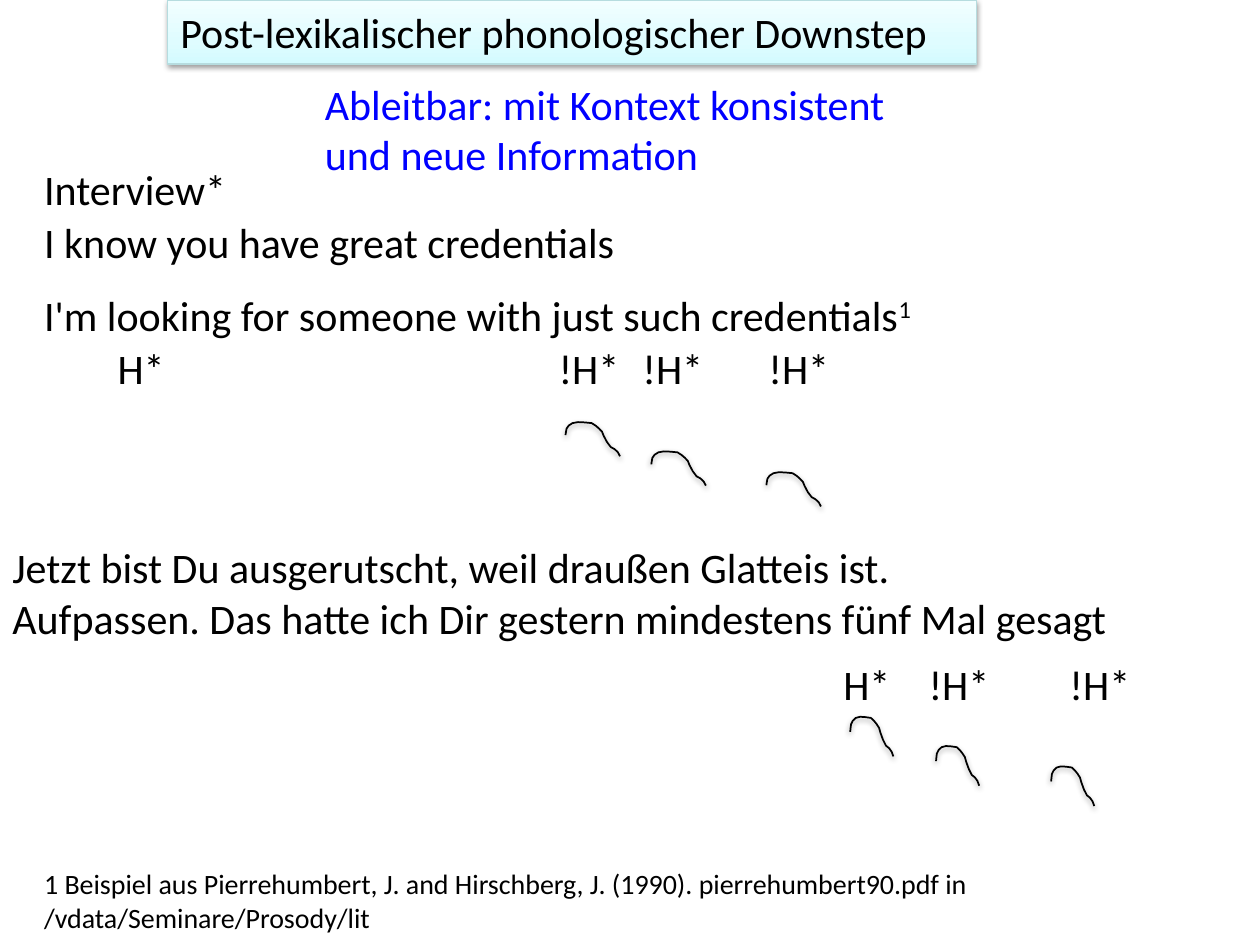
import copy
from dataclasses import dataclass

import pptx
import pptx.dml.color
import pptx.enum.text
import pptx.oxml
import pptx.oxml.ns
import pptx.util
from pptx.util import Cm

FONT = "Calibri"
BLACK = "000000"
BLUE = "0000FF"
LINE_HEIGHT = 1.29
TITLE_STOPS = [(0, "D3FBFF"), (0.35, "DFFCFF"), (1, "F2FEFF")]
# Pitch fall in percent of its width and height
FALL_POINTS = [
    (0, 38), (1, 28), (2, 19), (6, 10), (13, 3), (23, 0), (35, 1), (48, 3), (55, 10),
    (61, 18), (67, 28), (70, 40), (76, 58), (83, 73), (90, 79), (96, 88), (100, 100),
]


@dataclass
class TextBlock:
    """Text box in centimetres; each inner list holds the runs of a paragraph."""
    left: float
    top: float
    width: float
    height: float
    paragraphs: list[list[str]]
    size: int = 24
    color: str = BLACK


@dataclass
class PitchFall:
    left: float
    top: float
    width: float
    height: float


def accent(left: float, top: float, width: float, label: str) -> TextBlock:
    return TextBlock(left, top, width, LINE_HEIGHT, [[label]])


TEXT_BLOCKS = [
    TextBlock(6.3, 1.45, 12.5, 2.31,
              [["Ableitbar: mit Kontext konsistent und neue Information"]], color=BLUE),
    TextBlock(0.64, 4.24, 13.76, LINE_HEIGHT, [["I know you have great credentials"]]),
    TextBlock(0.64, 5.71, 19.69, LINE_HEIGHT,
              [["I'm looking for someone with just such credentials", "1"]]),
    TextBlock(0.64, 3.18, 5.93, LINE_HEIGHT, [["Interview*"]]),
    accent(2.12, 6.77, 1.48, "H*"),
    *(accent(left, 6.77, 2.12, "!H*") for left in (11.01, 12.7, 15.24)),
    TextBlock(0, 10.8, 25.1, 2.31, [
        ["Jetzt bist Du ausgerutscht, weil draußen Glatteis ist."],
        ["Aufpassen. Das hatte ich Dir gestern mindestens fünf Mal gesagt"],
    ]),
    accent(16.56, 13.16, 1.9, " H*"),
    *(accent(left, 13.16, 2.36, "!H*") for left in (18.47, 21.31)),
    TextBlock(0.64, 17.35, 24.76, 1.62, [
        ["1 Beispiel aus Pierrehumbert, J. and Hirschberg, J. (1990). pierrehumbert90.pdf in"],
        ["/vdata/Seminare/Prosody/lit"],
    ], size=16),
]

PITCH_FALLS = [
    *(PitchFall(left, top, 1.1, 0.69)
      for left, top in ((11.4, 8.51), (13.13, 9.1), (15.45, 9.52))),
    *(PitchFall(left, top, 0.87, 0.8)
      for left, top in ((17.14, 14.45), (18.87, 15.04), (21.19, 15.45))),
]


def rgb(color: str) -> pptx.dml.color.RGBColor:
    return pptx.dml.color.RGBColor.from_string(color)


def add_run(paragraph, text: str, size: int, color: str):
    run = paragraph.add_run()
    run.text = text
    run.font.name = FONT
    run.font.size = pptx.util.Pt(size)
    run.font.color.rgb = rgb(color)
    return run


def add_shadow(shape) -> None:
    shape.shadow.inherit = False
    effects = shape._element.spPr.find(pptx.oxml.ns.qn("a:effectLst"))
    effects.append(pptx.oxml.parse_xml(
        f'<a:outerShdw {pptx.oxml.ns.nsdecls("a")} blurRad="40000" dist="20000" '
        'dir="5400000" rotWithShape="0"><a:srgbClr val="000000">'
        '<a:alpha val="38000"/></a:srgbClr></a:outerShdw>'))


def fill_gradient(shape, stops: list[tuple[float, str]]) -> None:
    """Fill from bottom to top with three or more stops."""
    shape.fill.gradient()
    shape.fill.gradient_angle = 90
    stop_list = shape._element.spPr.find(".//" + pptx.oxml.ns.qn("a:gsLst"))
    while len(stop_list) < len(stops):
        stop_list.append(copy.deepcopy(stop_list[0]))
    for stop, (position, color) in zip(shape.fill.gradient_stops, stops):
        stop.position = position
        stop.color.rgb = rgb(color)


def format_title(title) -> None:
    title.left, title.top = Cm(3.38), Cm(0)
    title.width, title.height = Cm(16.31), Cm(LINE_HEIGHT)
    fill_gradient(title, TITLE_STOPS)
    title.line.color.rgb = rgb("B6DCDF")
    title.line.width = pptx.util.Pt(0.75)
    add_shadow(title)
    frame = title.text_frame
    frame.word_wrap = True
    frame.auto_size = pptx.enum.text.MSO_AUTO_SIZE.NONE
    frame.vertical_anchor = pptx.enum.text.MSO_ANCHOR.TOP
    paragraph = frame.paragraphs[0]
    paragraph.alignment = pptx.enum.text.PP_ALIGN.LEFT
    add_run(paragraph, "Post-lexikalischer phonologischer Downstep", 24, BLACK)


def add_text(slide, block: TextBlock) -> None:
    box = slide.shapes.add_textbox(
        Cm(block.left), Cm(block.top), Cm(block.width), Cm(block.height))
    frame = box.text_frame
    frame.word_wrap = True
    for index, runs in enumerate(block.paragraphs):
        paragraph = frame.add_paragraph() if index else frame.paragraphs[0]
        add_run(paragraph, runs[0], block.size, block.color)
        for note_mark in runs[1:]:
            run = add_run(paragraph, note_mark, block.size, block.color)
            run._r.get_or_add_rPr().set("baseline", "30000")


def add_pitch_fall(slide, fall: PitchFall) -> None:
    points = [(Cm(fall.left + fall.width * x / 100), Cm(fall.top + fall.height * y / 100))
              for x, y in FALL_POINTS]
    builder = slide.shapes.build_freeform(*points[0])
    builder.add_line_segments(points[1:], close=False)
    shape = builder.convert_to_shape()
    shape.fill.background()
    shape.line.color.rgb = rgb(BLACK)
    shape.line.width = pptx.util.Pt(1)
    add_shadow(shape)


def main() -> None:
    presentation = pptx.Presentation()
    presentation.slide_width, presentation.slide_height = Cm(25.4), Cm(19.05)
    slide = presentation.slides.add_slide(presentation.slide_layouts[5])
    format_title(slide.shapes.title)
    for block in TEXT_BLOCKS:
        add_text(slide, block)
    for fall in PITCH_FALLS:
        add_pitch_fall(slide, fall)
    presentation.save("out.pptx")


if __name__ == "__main__":
    main()
